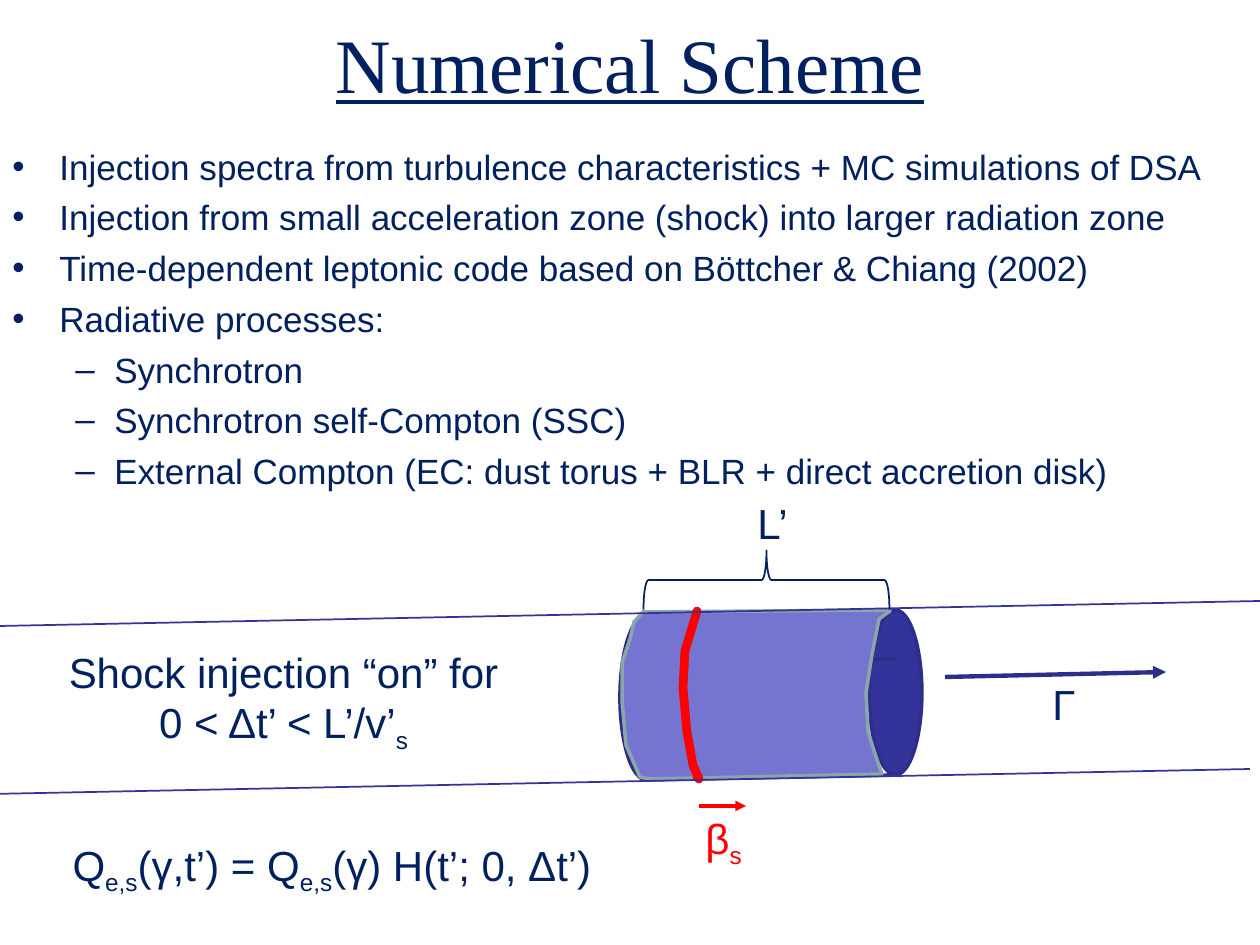
from dataclasses import dataclass
from typing import NamedTuple, Optional

from lxml.etree import SubElement
from pptx import Presentation
from pptx.dml.color import RGBColor
from pptx.enum.shapes import MSO_CONNECTOR as Connector, MSO_SHAPE as Preset
from pptx.enum.text import MSO_ANCHOR as Anchor, PP_ALIGN as Align
from pptx.oxml.ns import qn
from pptx.util import Emu, Pt

PX = 914400 / 126
COLORS = {
    "text": "002060",
    "edge": "2D2D8A",
    "blue": "333399",
    "body": "7575D1",
    "rim": "8AA6A8",
    "red": "FF0000",
}


class Box(NamedTuple):
    left: int
    top: int
    width: int
    height: int


class Run(NamedTuple):
    text: str
    subscript: bool = False


@dataclass
class Label:
    box: Box
    lines: list[list[Run]]
    color: str = "text"
    align: Align = Align.CENTER


@dataclass
class Line:
    start: tuple[int, int]
    end: tuple[int, int]
    color: str
    width: float
    arrow: bool = False


@dataclass
class Outline:
    points: list[tuple[int, int]]
    color: str
    width: float
    fill: Optional[str] = None
    closed: bool = False


class Bullet(NamedTuple):
    text: str
    level: int = 0


class BulletStyle(NamedTuple):
    symbol: str
    margin: int
    hanging: int


BULLET_STYLES = [BulletStyle("•", 47, 47), BulletStyle("–", 102, 39)]
BULLETS = [
    Bullet("Injection spectra from turbulence characteristics + MC simulations of DSA"),
    Bullet("Injection from small acceleration zone (shock) into larger radiation zone"),
    Bullet("Time-dependent leptonic code based on Böttcher & Chiang (2002)"),
    Bullet("Radiative processes:"),
    Bullet("Synchrotron", 1),
    Bullet("Synchrotron self-Compton (SSC)", 1),
    Bullet("External Compton (EC: dust torus + BLR + direct accretion disk)", 1),
]
CYLINDER_LINES = [
    Line((645, 664), (896, 659), "edge", 2),
    Line((644, 780), (896, 775), "edge", 2),
]
CYLINDER_SIDE = Outline(
    [(643, 612), (888, 610), (890, 611), (879, 619), (872, 654), (866, 693),
     (868, 732), (879, 766), (882, 774), (650, 779), (640, 777), (626, 745),
     (622, 701), (622, 663), (630, 639), (634, 622)],
    "rim", 2, "body", closed=True)
SHOCK_FRONT = Outline(
    [(697, 611), (685, 651), (683, 688), (687, 732), (693, 765), (699, 779), (697, 777)],
    "red", 5)
ARROWS = [
    Line((945, 677), (1166, 672), "edge", 2.5, arrow=True),
    Line((699, 806), (746, 806), "red", 2, arrow=True),
]
JET_EDGES = [
    Line((0, 626), (1260, 601), "blue", 1),
    Line((-10, 794), (1250, 769), "blue", 1),
]
LABELS = [
    Label(Box(1040, 672, 63, 63), [[Run("Γ")]], align=Align.LEFT),
    Label(Box(693, 806, 84, 63), [[Run("β"), Run("s", True)]], "red", Align.LEFT),
    Label(Box(54, 640, 459, 115),
          [[Run("Shock injection “on” for")], [Run("0 < Δt’ < L’/v’"), Run("s", True)]]),
    Label(Box(722, 491, 101, 63), [[Run("L’")]]),
    Label(Box(54, 833, 556, 63),
          [[Run("Q"), Run("e,s", True), Run("(γ,t’) = Q"), Run("e,s", True),
            Run("(γ) H(t’; 0, Δt’)")]]),
]


def px(value: int) -> Emu:
    return Emu(round(value * PX))


def rgb(name: str) -> RGBColor:
    return RGBColor.from_string(COLORS[name])


def add_run(paragraph, run: Run, size: int, color: str = "text", font: str = "Arial"):
    text_run = paragraph.add_run()
    text_run.text = run.text
    text_run.font.size = Pt(size)
    text_run.font.name = font
    text_run.font.color.rgb = rgb(color)
    if run.subscript:
        text_run._r.get_or_add_rPr().set("baseline", "-25000")
    return text_run


def add_text_frame(slide, box: Box):
    frame = slide.shapes.add_textbox(*map(px, box)).text_frame
    frame.word_wrap = True
    return frame


def add_paragraph(frame, index: int):
    return frame.add_paragraph() if index else frame.paragraphs[0]


def add_title(slide, box: Box, text: str) -> None:
    frame = add_text_frame(slide, box)
    frame.vertical_anchor = Anchor.MIDDLE
    paragraph = frame.paragraphs[0]
    paragraph.alignment = Align.CENTER
    add_run(paragraph, Run(text), 44, font="Times New Roman").font.underline = True


def add_bullets(slide, box: Box, bullets: list[Bullet]) -> None:
    frame = add_text_frame(slide, box)
    for index, bullet in enumerate(bullets):
        style = BULLET_STYLES[bullet.level]
        paragraph = add_paragraph(frame, index)
        paragraph.level = bullet.level
        if index:
            paragraph.space_before = Pt(5)
        properties = paragraph._p.get_or_add_pPr()
        properties.set("marL", str(px(style.margin)))
        properties.set("indent", str(px(-style.hanging)))
        SubElement(properties, qn("a:buFont"), typeface="Arial")
        SubElement(properties, qn("a:buChar"), char=style.symbol)
        add_run(paragraph, Run(bullet.text), 20)


def add_label(slide, label: Label) -> None:
    frame = add_text_frame(slide, label.box)
    for index, runs in enumerate(label.lines):
        paragraph = add_paragraph(frame, index)
        paragraph.alignment = label.align
        for run in runs:
            add_run(paragraph, run, 24, label.color)


def add_line(slide, line: Line) -> None:
    connector = slide.shapes.add_connector(
        Connector.STRAIGHT, *map(px, line.start + line.end))
    connector.line.color.rgb = rgb(line.color)
    connector.line.width = Pt(line.width)
    if line.arrow:
        SubElement(connector.line._get_or_add_ln(), qn("a:tailEnd"), type="triangle")
    SubElement(connector._element.spPr, qn("a:effectLst"))


def style_shape(shape, color: str, width: float, fill: Optional[str] = None) -> None:
    shape.shadow.inherit = False
    if fill:
        shape.fill.solid()
        shape.fill.fore_color.rgb = rgb(fill)
    else:
        shape.fill.background()
    shape.line.color.rgb = rgb(color)
    shape.line.width = Pt(width)


def add_preset(slide, preset: Preset, box: Box, color: str, width: float,
               fill: Optional[str] = None, rotation: int = 0) -> None:
    shape = slide.shapes.add_shape(preset, *map(px, box))
    shape.rotation = rotation
    style_shape(shape, color, width, fill)


def add_outline(slide, outline: Outline) -> None:
    builder = slide.shapes.build_freeform(*outline.points[0], scale=PX)
    builder.add_line_segments(outline.points[1:], close=outline.closed)
    shape = builder.convert_to_shape()
    style_shape(shape, outline.color, outline.width, outline.fill)
    shape.line._get_or_add_ln().set("cap", "rnd")


def main() -> None:
    presentation = Presentation()
    presentation.slide_width, presentation.slide_height = px(1260), px(945)
    slide = presentation.slides.add_slide(presentation.slide_layouts[6])
    add_title(slide, Box(63, 10, 1134, 105), "Numerical Scheme")
    add_bullets(slide, Box(0, 139, 1260, 368), BULLETS)
    add_preset(slide, Preset.OVAL, Box(620, 615, 53, 165), "edge", 2)
    add_preset(slide, Preset.OVAL, Box(869, 610, 53, 165), "edge", 2, "blue")
    for line in CYLINDER_LINES:
        add_line(slide, line)
    for outline in (CYLINDER_SIDE, SHOCK_FRONT):
        add_outline(slide, outline)
    for line in ARROWS + JET_EDGES:
        add_line(slide, line)
    add_preset(slide, Preset.RIGHT_BRACE, Box(737, 457, 59, 246), "text", 1, rotation=270)
    for label in LABELS:
        add_label(slide, label)
    presentation.save("out.pptx")


if __name__ == "__main__":
    main()
